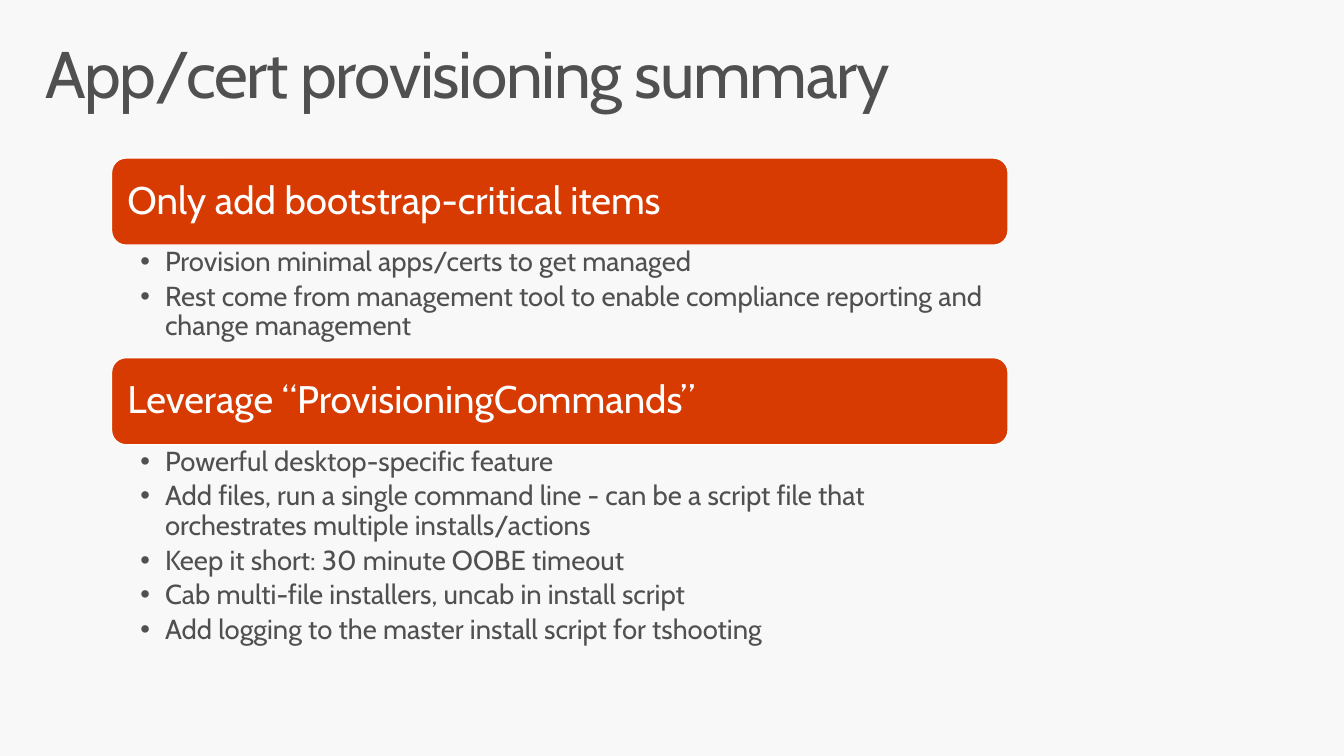
from dataclasses import dataclass

from lxml.etree import SubElement
from pptx import Presentation
from pptx.dml.color import RGBColor
from pptx.enum.shapes import MSO_SHAPE
from pptx.enum.text import MSO_ANCHOR, PP_ALIGN
from pptx.oxml.ns import qn
from pptx.util import Pt

PX = 9144  # EMU per px, 100 px to the inch
FONT = "Cabin"
COLORS = {"background": "F8F8F8", "text": "505050", "band": "D83B01", "white": "FFFFFF"}

SECTION_LEFT, SECTION_WIDTH = 113, 907
BAND_HEIGHT = 88
BAND_INSET = 4
BULLET_INDENT = 25


@dataclass(frozen=True)
class Section:
    heading: str
    top: int
    points_height: int
    points: tuple[str, ...]


SECTIONS = (
    Section("Only add bootstrap-critical items", 160, 114, (
        "Provision minimal apps/certs to get managed",
        "Rest come from management tool to enable compliance reporting and change management",
    )),
    Section("Leverage “ProvisioningCommands”", 362, 238, (
        "Powerful desktop-specific feature",
        "Add files, run a single command line - can be a script file that "
        "orchestrates multiple installs/actions",
        "Keep it short: 30 minute OOBE timeout",
        "Cab multi-file installers, uncab in install script",
        "Add logging to the master install script for tshooting",
    )),
)


def px(length: int) -> int:
    return length * PX


def rgb(name: str) -> RGBColor:
    return RGBColor.from_string(COLORS[name])


def add_text(slide, box: tuple[int, int, int, int], insets: tuple[int, int, int, int],
             lines: tuple[str, ...], size: int, color: str,
             anchor: MSO_ANCHOR = MSO_ANCHOR.TOP, bulleted: bool = False):
    """Add a wrapped text box; insets run left, top, right, bottom."""
    frame = slide.shapes.add_textbox(*map(px, box)).text_frame
    frame.word_wrap = True
    frame.vertical_anchor = anchor
    (frame.margin_left, frame.margin_top,
     frame.margin_right, frame.margin_bottom) = map(px, insets)
    for index, line in enumerate(lines):
        paragraph = frame.add_paragraph() if index else frame.paragraphs[0]
        paragraph.text = line
        paragraph.alignment = PP_ALIGN.LEFT
        paragraph.line_spacing = 0.9
        if bulleted:
            paragraph.space_after = Pt(3.6)
            properties = paragraph._p.get_or_add_pPr()
            properties.set("marL", str(px(BULLET_INDENT)))
            properties.set("indent", str(-px(BULLET_INDENT)))
            SubElement(properties, qn("a:buFont"), typeface="Arial")
            SubElement(properties, qn("a:buChar"), char="•")
        paragraph.font.name = FONT
        paragraph.font.size = Pt(size)
        paragraph.font.color.rgb = rgb(color)
    return frame


def add_section(slide, section: Section) -> None:
    # Heading band
    band = slide.shapes.add_shape(
        MSO_SHAPE.ROUNDED_RECTANGLE,
        *map(px, (SECTION_LEFT, section.top, SECTION_WIDTH, BAND_HEIGHT)))
    band.shadow.inherit = False
    band.fill.solid()
    band.fill.fore_color.rgb = rgb("band")
    band.line.color.rgb = rgb("white")
    band.line.width = Pt(0.85)
    add_text(slide,
             (SECTION_LEFT + BAND_INSET, section.top + BAND_INSET,
              SECTION_WIDTH - 2 * BAND_INSET, BAND_HEIGHT - 2 * BAND_INSET),
             (12, 12, 12, 12), (section.heading,), 28, "white", MSO_ANCHOR.MIDDLE)
    # Points below the band
    add_text(slide,
             (SECTION_LEFT, section.top + BAND_HEIGHT, SECTION_WIDTH, section.points_height),
             (29, 3, 16, 3), section.points, 20, "text", bulleted=True)


def main() -> None:
    presentation = Presentation()
    presentation.slide_width, presentation.slide_height = px(1360), px(765)
    slide = presentation.slides.add_slide(presentation.slide_layouts[6])
    slide.background.fill.solid()
    slide.background.fill.fore_color.rgb = rgb("background")

    # Title with tightened letter spacing
    title = add_text(slide, (30, 32, 1300, 100), (16, 10, 16, 10),
                     ("App/cert provisioning summary",), 48, "text")
    title.paragraphs[0].runs[0].font._element.set("spc", "-100")

    for section in SECTIONS:
        add_section(slide, section)

    presentation.save("out.pptx")


if __name__ == "__main__":
    main()
